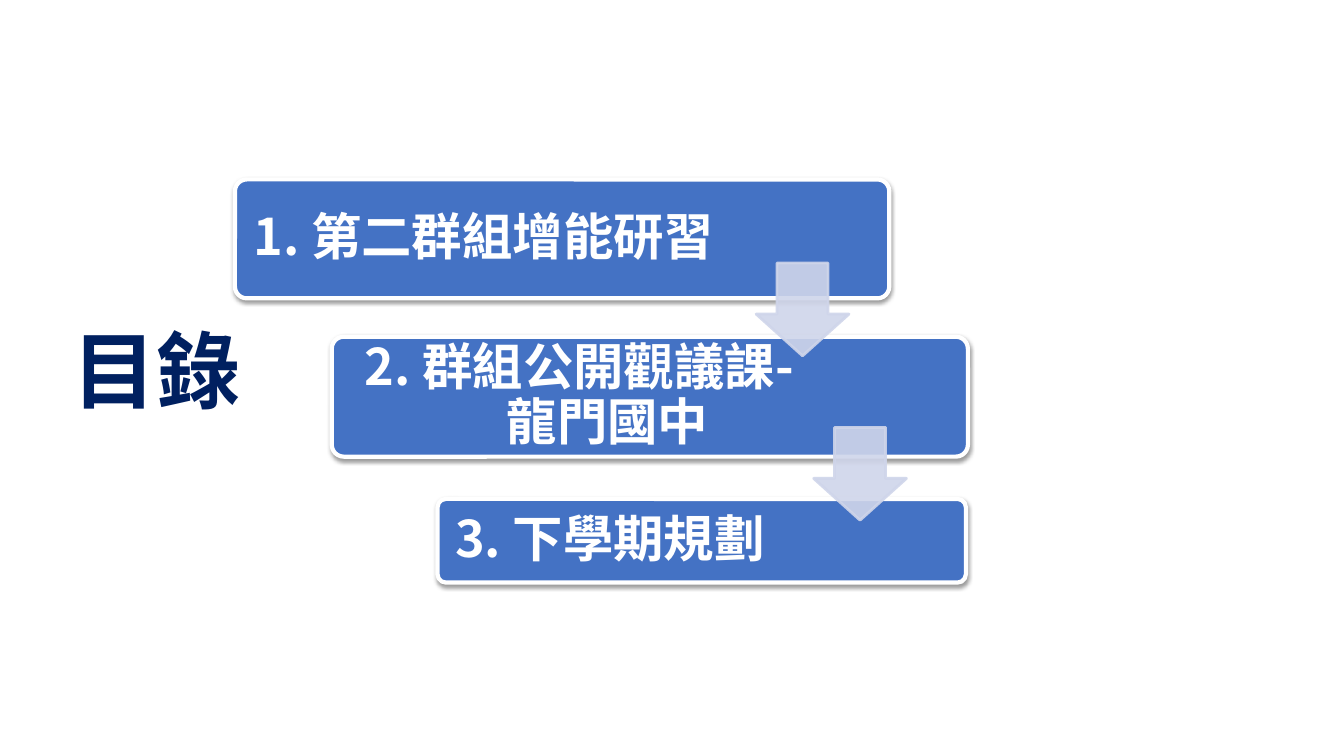
"""Build a contents slide with three stepped topics joined by arrows."""
import pptx
import pptx.dml.color
import pptx.enum.shapes
import pptx.enum.text
import pptx.oxml
import pptx.oxml.ns
import pptx.util
from pptx.util import Inches

NAVY = pptx.dml.color.RGBColor(0x00, 0x20, 0x60)
BLUE = pptx.dml.color.RGBColor(0x44, 0x72, 0xC4)
PALE = pptx.dml.color.RGBColor(0xCF, 0xD5, 0xEA)
WHITE = pptx.dml.color.RGBColor(0xFF, 0xFF, 0xFF)
SHAPES = pptx.enum.shapes.MSO_SHAPE
ALIGN = pptx.enum.text.PP_ALIGN
ANCHOR = pptx.enum.text.MSO_ANCHOR
TOPIC_FONT = "Noto Sans CJK SC"
SHADOW = (
    f'<a:outerShdw {pptx.oxml.ns.nsdecls("a")} blurRad="39370" dist="20320" '
    'dir="5400000" rotWithShape="0"><a:srgbClr val="000000">'
    '<a:alpha val="38000"/></a:srgbClr></a:outerShdw>'
)
ALPHA = f'<a:alpha {pptx.oxml.ns.nsdecls("a")} val="90000"/>'


def set_all(target, **values):
    for name, value in values.items():
        setattr(target, name, value)


def add_text(p, text, font, size, color):
    r = p.add_run()
    r.text = text
    set_all(r.font, name=font, size=pptx.util.Pt(size), bold=True)
    r.font.color.rgb = color
    ea = pptx.oxml.parse_xml(
        f'<a:ea {pptx.oxml.ns.nsdecls("a")} typeface="{TOPIC_FONT}"/>')
    r.font._element.find(pptx.oxml.ns.qn("a:latin")).addnext(ea)


def add_preset(slide, kind, box, adjustments, fill, line, width):
    sp = slide.shapes.add_shape(kind, *map(Inches, box))
    for i, value in enumerate(adjustments):
        sp.adjustments[i] = value
    sp.shadow.inherit = False
    sp.fill.solid()
    sp.fill.fore_color.rgb = fill
    sp.line.color.rgb = line
    sp.line.width = pptx.util.Pt(width)
    return sp


def add_title(slide, text):
    sp = slide.shapes.title
    set_all(sp, left=Inches(0.47), top=Inches(3.11),
            width=Inches(2.17), height=Inches(1.11))
    tf = sp.text_frame
    set_all(tf, word_wrap=True, vertical_anchor=ANCHOR.TOP,
            auto_size=pptx.enum.text.MSO_AUTO_SIZE.NONE)
    p = tf.paragraphs[0]
    set_all(p, alignment=ALIGN.CENTER, line_spacing=1.0)
    add_text(p, text, "Arial", 60, NAVY)


def add_topic(slide, box, lines, alignment, right):
    sp = add_preset(slide, SHAPES.ROUNDED_RECTANGLE, box, [0.1], BLUE, WHITE, 3)
    effects = sp._element.spPr.find(pptx.oxml.ns.qn("a:effectLst"))
    effects.append(pptx.oxml.parse_xml(SHADOW))
    tf = sp.text_frame
    set_all(tf, word_wrap=True, vertical_anchor=ANCHOR.MIDDLE,
            margin_left=Inches(0.15), margin_right=Inches(right),
            margin_top=Inches(0.05), margin_bottom=Inches(0.05))
    for i, text in enumerate(lines):
        p = tf.add_paragraph() if i else tf.paragraphs[0]
        set_all(p, alignment=alignment, line_spacing=0.9)
        if i:
            p._p.get_or_add_pPr().set("marL", str(Inches(0.56)))
        add_text(p, text, TOPIC_FONT, 36, WHITE)


def add_arrow(slide, left, top):
    sp = add_preset(slide, SHAPES.DOWN_ARROW, (left, top, 0.92, 0.92),
                    [0.55, 0.45], PALE, PALE, 2)
    for color in sp._element.spPr.iter(pptx.oxml.ns.qn("a:srgbClr")):
        color.append(pptx.oxml.parse_xml(ALPHA))


def main():
    prs = pptx.Presentation()
    set_all(prs, slide_width=Inches(13.33), slide_height=Inches(7.5))
    slide = prs.slides.add_slide(prs.slide_layouts[5])
    add_title(slide, "目錄")
    topics = [
        ((2.33, 1.78, 6.49, 1.18), ["1. 第二群組增能研習"], ALIGN.LEFT, 1.5),
        ((3.29, 3.34, 6.31, 1.19), ["2. 群組公開觀議課-", "龍門國中"],
         ALIGN.CENTER, 1.55),
        ((4.34, 4.95, 5.24, 0.83), ["3. 下學期規劃"], ALIGN.LEFT, 1.32),
    ]
    for topic in topics:
        add_topic(slide, *topic)
    for left, top in [(7.5, 2.61), (8.07, 4.24)]:
        add_arrow(slide, left, top)
    prs.save("out.pptx")


if __name__ == "__main__":
    main()
